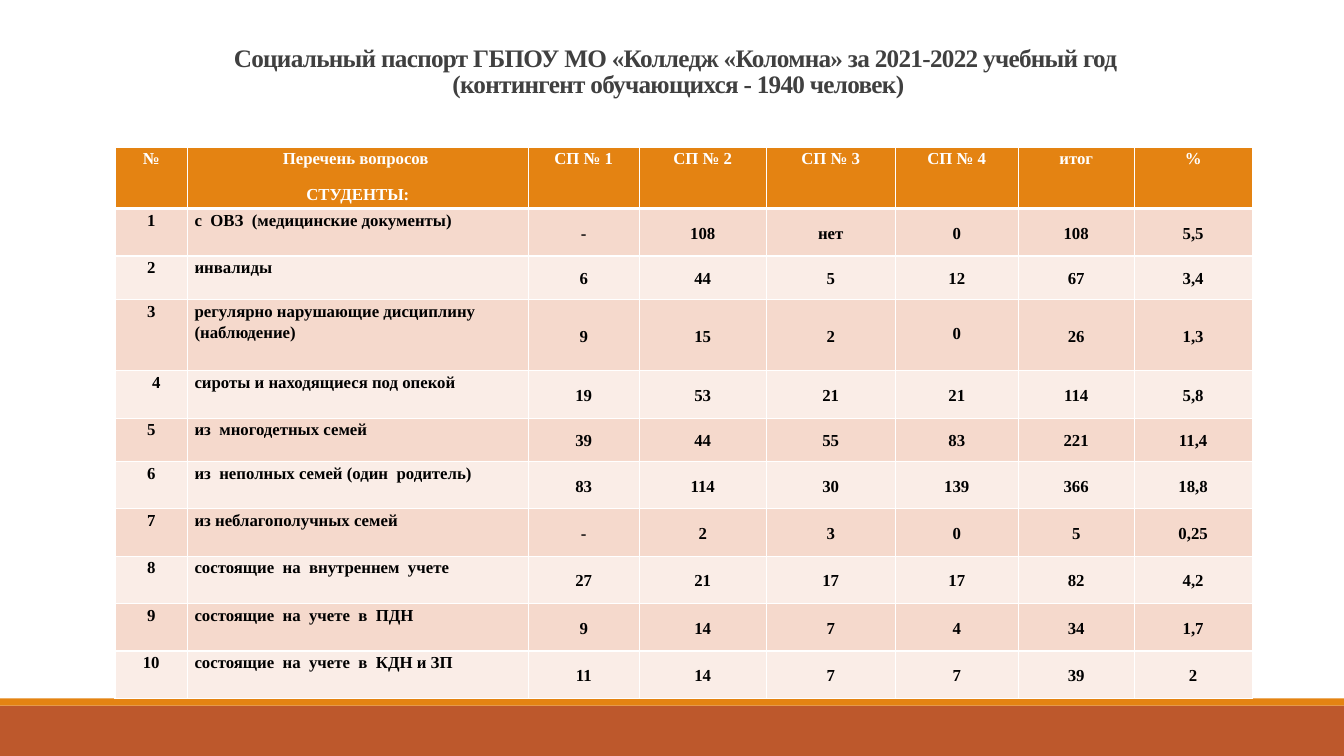
from dataclasses import dataclass

from lxml import etree
from pptx import Presentation
from pptx import util as u
from pptx.dml.color import RGBColor
from pptx.enum import shapes, text
from pptx.oxml import ns


@dataclass(frozen=True)
class Theme:
    font: str = "Times New Roman"
    title_size: int = 18
    table_size: int = 12
    title: str = "404040"
    body: str = "000000"
    white: str = "FFFFFF"
    orange: str = "E48312"
    rust: str = "BD582C"
    bands: tuple = ("F5D9CC", "FAEDE7")


THEME = Theme()
CENTER, LEFT = text.PP_ALIGN.CENTER, text.PP_ALIGN.LEFT
TOP, MIDDLE, BOTTOM = (text.MSO_ANCHOR.TOP, text.MSO_ANCHOR.MIDDLE,
                       text.MSO_ANCHOR.BOTTOM)

# A vertical tab is a line break inside a paragraph.
TITLE = ("Социальный паспорт ГБПОУ МО «Колледж «Коломна» за 2021-2022 учебный год\v"
         " (контингент обучающихся - 1940 человек)")
HEADINGS = ["№", "Перечень вопросов \nСТУДЕНТЫ:", "СП № 1", "СП № 2", "СП № 3",
            "СП № 4", "итог", "%"]
QUESTIONS = [
    ("с  ОВЗ  (медицинские документы)", "-", "108", "нет", "0", "108", "5,5"),
    ("инвалиды", "6", "44", "5", "12", "67", "3,4"),
    ("регулярно нарушающие дисциплину  (наблюдение)", "9", "15", "2", "0", "26", "1,3"),
    ("сироты и находящиеся под опекой", "19", "53", "21", "21", "114", "5,8"),
    ("из  многодетных семей", "39", "44", "55", "83", "221", "11,4"),
    ("из  неполных семей (один  родитель)", "83", "114", "30", "139", "366", "18,8"),
    ("из неблагополучных семей", "-", "2", "3", "0", "5", "0,25"),
    ("состоящие  на  внутреннем  учете", "27", "21", "17", "17", "82", "4,2"),
    ("состоящие  на  учете  в  ПДН", "9", "14", "7", "4", "34", "1,7"),
    ("состоящие  на  учете  в  КДН и ЗП", "11", "14", "7", "7", "39", "2"),
]
COLUMN_WIDTHS = [0.72, 3.38, 1.1, 1.26, 1.28, 1.22, 1.15, 1.17]
HEADER_HEIGHT, ROW_HEIGHT = 0.61, 0.47
SPECIAL_HEIGHTS = {2: 0.43, 3: 0.71, 5: 0.43}
# Paragraph format of single cells, by row and column.
SPECIAL_FORMATS = {
    (3, 5): {"line_spacing": u.Pt(12)},
    (4, 0): {"align": LEFT, "first_indent": 0.3},
}


def write_text(frame, words, *, size, color, align=CENTER, line_spacing=1.15,
               space_after=0, first_indent=0, tracking=0):
    """Write one bold paragraph per line; space_after parts the paragraphs."""
    lines = words.split("\n")
    for index, line in enumerate(lines):
        para = frame.paragraphs[0] if index == 0 else frame.add_paragraph()
        para.text = line
        para.alignment = align
        para.line_spacing = line_spacing
        para.space_before = u.Pt(0)
        para.space_after = u.Pt(space_after if index < len(lines) - 1 else 0)
        if first_indent:
            para._p.get_or_add_pPr().set("indent", str(u.Inches(first_indent)))
        for span in para.runs:
            span.font.name = THEME.font
            span.font.size = u.Pt(size)
            span.font.bold = True
            span.font.color.rgb = RGBColor.from_string(color)
            if tracking:
                span.font._element.set("spc", str(round(tracking * 100)))


def add_title(page, left, top, width, height):
    frame = page.shapes.add_textbox(*map(u.Inches, (left, top, width, height))).text_frame
    frame.word_wrap = True
    frame.vertical_anchor = BOTTOM
    write_text(frame, TITLE, size=THEME.title_size, color=THEME.title,
               line_spacing=0.85, tracking=-0.5)


def add_footer(page, left, top, width, height):
    """Draw a rust band under a thin orange stripe."""
    stripe = 0.07
    for offset, depth, color in ((stripe, height - stripe, THEME.rust),
                                 (0, stripe, THEME.orange)):
        band = page.shapes.add_shape(
            shapes.MSO_SHAPE.RECTANGLE,
            *map(u.Inches, (left, top + offset, width, depth)))
        band.shadow.inherit = False
        band.fill.solid()
        band.fill.fore_color.rgb = RGBColor.from_string(color)
        band.line.fill.background()


def set_borders(cell, top=1, bottom=1):
    properties = cell._tc.get_or_add_tcPr()
    widths = {"a:lnL": 1, "a:lnR": 1, "a:lnT": top, "a:lnB": bottom}
    for index, (tag, width) in enumerate(widths.items()):
        line = etree.Element(ns.qn(tag), w=str(u.Pt(width)))
        fill = etree.SubElement(line, ns.qn("a:solidFill"))
        etree.SubElement(fill, ns.qn("a:srgbClr"), val=THEME.white)
        properties.insert(index, line)


def fill_cell(cell, words, row, column):
    header = row == 0
    cell.margin_left = cell.margin_right = u.Inches(0.07)
    cell.margin_top = cell.margin_bottom = 0
    cell.vertical_anchor = TOP if header or column < 2 else MIDDLE
    cell.fill.solid()
    cell.fill.fore_color.rgb = RGBColor.from_string(
        THEME.orange if header else THEME.bands[(row - 1) % 2])
    set_borders(cell, top=3 if row == 1 else 1, bottom=3 if header else 1)
    style = {"align": LEFT if column == 1 and not header else CENTER,
             "space_after": 10, **SPECIAL_FORMATS.get((row, column), {})}
    write_text(cell.text_frame, words, size=THEME.table_size,
               color=THEME.white if header else THEME.body, **style)


def add_passport_table(page, left, top):
    records = [HEADINGS] + [(str(number), *question)
                            for number, question in enumerate(QUESTIONS, 1)]
    heights = [HEADER_HEIGHT] + [SPECIAL_HEIGHTS.get(row, ROW_HEIGHT)
                                 for row in range(1, len(records))]
    table = page.shapes.add_table(
        len(records), len(HEADINGS),
        *map(u.Inches, (left, top, sum(COLUMN_WIDTHS), sum(heights)))).table
    for column, width in zip(table.columns, COLUMN_WIDTHS):
        column.width = u.Inches(width)
    for row, (record, height) in enumerate(zip(records, heights)):
        table.rows[row].height = u.Inches(height)
        for column, words in enumerate(record):
            fill_cell(table.cell(row, column), words, row, column)


def main():
    deck = Presentation()
    deck.slide_width, deck.slide_height = u.Inches(13.33), u.Inches(7.5)
    page = deck.slides.add_slide(deck.slide_layouts[6])
    add_footer(page, 0, 6.93, 13.33, 0.57)
    add_title(page, 1.2, 0.31, 11, 0.72)
    add_passport_table(page, 1.14, 1.46)
    deck.save("out.pptx")


if __name__ == "__main__":
    main()
